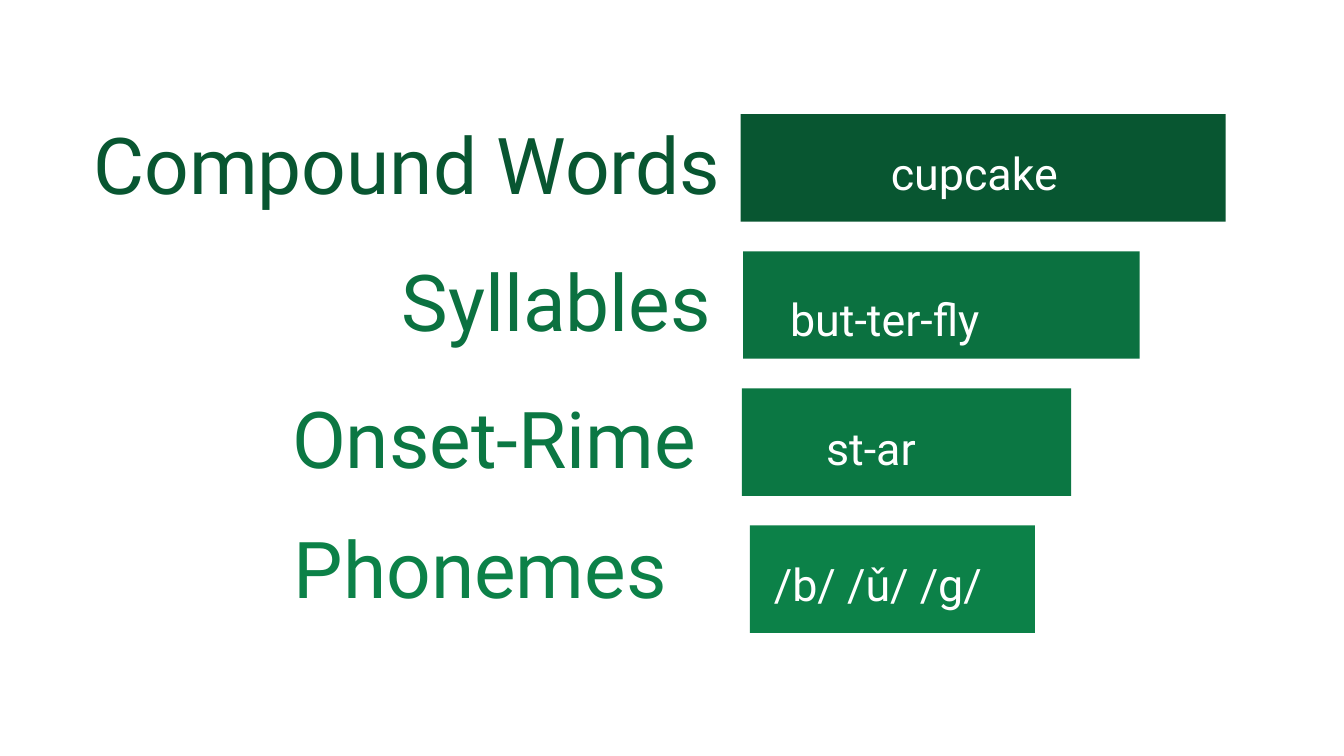
from pptx import Presentation
from pptx import util as u
from pptx.dml.color import RGBColor
from pptx.enum import shapes, text

LEFT, MID = text.PP_ALIGN.LEFT, text.PP_ALIGN.CENTER
TOP, STEP, HIGH = 0.85, 1.02, 0.8

# label, its box (x, y, w), colour, bar (x, w), example, its box, alignment
ROWS = [
    ("Compound Words", (0.49, 0.91, 4.97), "085631", (5.51, 3.61),
     "cupcake", (5.6, 0.94, 3.3, 0.63), MID),
    ("Syllables", (1.88, 1.93, 3.51), "0B7140", (5.53, 2.95),
     "but-ter-fly", (5.78, 2.16, 2.19, 0.36), LEFT),
    ("Onset-Rime", (1.15, 2.95, 4.13), "0B7743", (5.52, 2.45),
     "st-ar", (5.57, 3.12, 1.82, 0.36), MID),
    ("Phonemes", (1.88, 3.92, 3.18), "0C8148", (5.58, 2.12),
     "/b/ /ǔ/ /g/", (5.66, 4.13, 1.84, 0.36), LEFT),
]


def paint(hue):
    """Turn a hex string into a colour."""
    return RGBColor.from_string(hue)


def place(box):
    """Turn a box in inches into lengths."""
    return [u.Inches(v) for v in box]


def write(group, words, box, size=24, hue="FFFFFF", align=LEFT, lead=1.15):
    """Add a text box with one formatted line."""
    frame = group.shapes.add_textbox(*place(box)).text_frame
    frame.word_wrap = True
    frame.vertical_anchor = text.MSO_ANCHOR.MIDDLE
    para = frame.paragraphs[0]
    para.alignment = align
    para.line_spacing = lead
    run = para.add_run()
    run.text = words
    run.font.name = "Roboto"
    run.font.size = u.Pt(size)
    run.font.color.rgb = paint(hue)


def bar(group, box, hue):
    """Add a plain filled bar."""
    shape = group.shapes.add_shape(shapes.MSO_SHAPE.RECTANGLE, *place(box))
    shape.shadow.inherit = False
    shape.fill.solid()
    shape.fill.fore_color.rgb = paint(hue)
    shape.line.fill.background()


def main():
    """Build the slide and save it."""
    deck = Presentation()
    deck.slide_width = u.Inches(10)
    deck.slide_height = u.Inches(10 * 9 / 16)
    slide = deck.slides.add_slide(deck.slide_layouts[6])
    for i, (label, spot, hue, (x, wide), word, box, align) in enumerate(ROWS):
        group = slide.shapes.add_group_shape()
        write(group, label, (*spot, 0.69), size=42, hue=hue,
              align=text.PP_ALIGN.RIGHT, lead=0.9)
        bar(group, (x, TOP + i * STEP, wide, HIGH), hue)
        write(group, word, box, align=align)
    deck.save("out.pptx")


if __name__ == "__main__":
    main()
